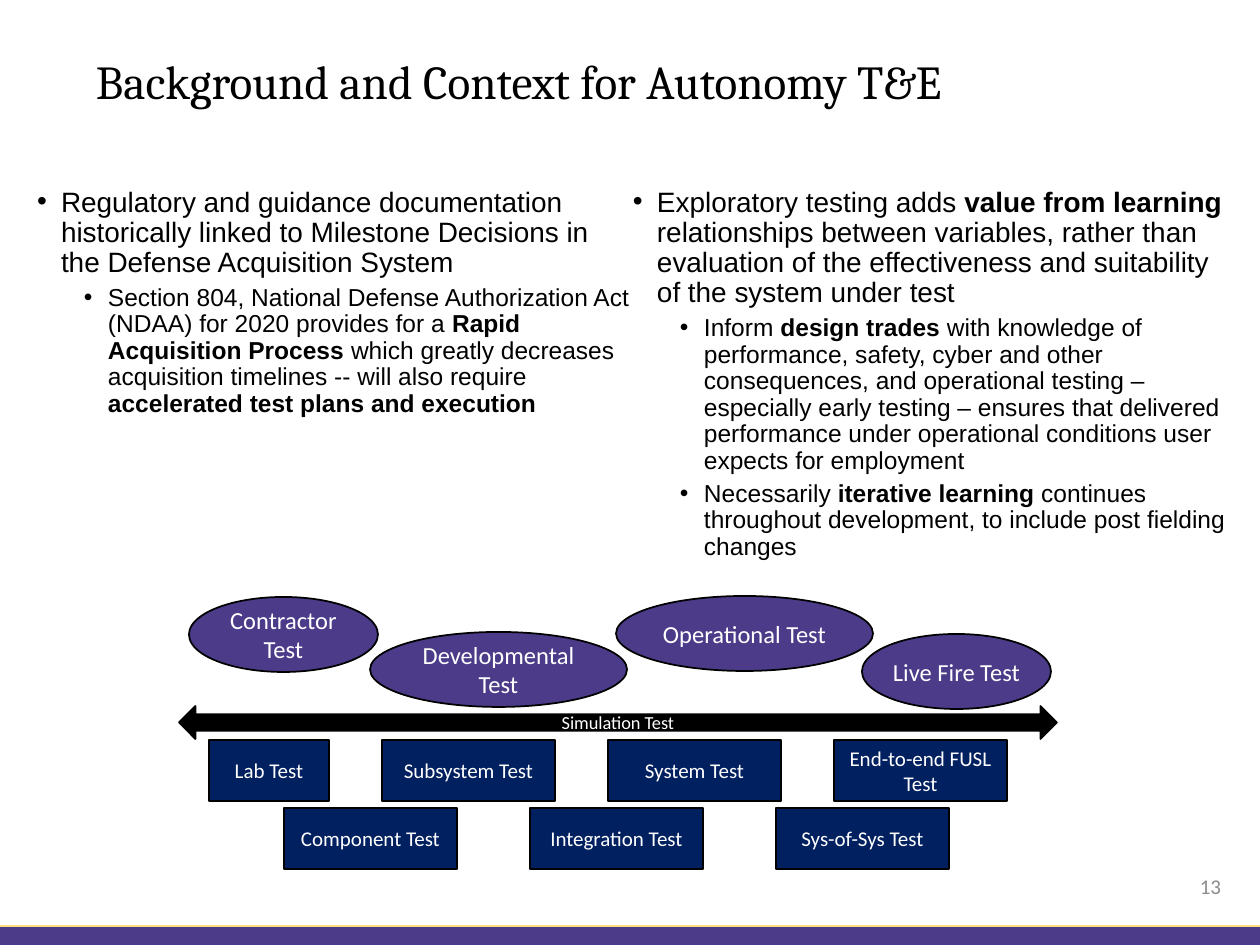
from lxml import etree
from pptx import Presentation
from pptx import util as u
from pptx.dml.color import RGBColor
from pptx.enum import shapes, text
from pptx.oxml import ns

PX_PER_INCH = 126
PURPLE = RGBColor(0x4C, 0x3B, 0x89)
GOLD = RGBColor(0xFF, 0xDF, 0x7F)
NAVY = RGBColor(0x00, 0x20, 0x60)
BLACK = RGBColor(0x00, 0x00, 0x00)
WHITE = RGBColor(0xFF, 0xFF, 0xFF)
GRAY = RGBColor(0x8C, 0x8C, 0x8C)

LEFT_BULLETS = [
    (0, ["Regulatory and guidance documentation historically linked to "
         "Milestone Decisions in the Defense Acquisition System"]),
    (1, ["Section 804, National Defense Authorization Act (NDAA) for 2020 provides for a ",
         "Rapid Acquisition Process",
         " which greatly decreases acquisition timelines -- will also require ",
         "accelerated test plans and execution"]),
]
RIGHT_BULLETS = [
    (0, ["Exploratory testing adds ", "value from learning",
         " relationships between variables, rather than evaluation of the "
         "effectiveness and suitability of the system under test"]),
    (1, ["Inform ", "design trades",
         " with knowledge of performance, safety, cyber and other consequences, "
         "and operational testing – especially early testing – ensures that delivered "
         "performance under operational conditions user expects for employment"]),
    (1, ["Necessarily ", "iterative learning",
         " continues throughout development, to include post fielding changes"]),
]
PHASES = [
    ("Contractor Test", 189, 597, 189),
    ("Developmental Test", 370, 632, 257),
    ("Operational Test", 616, 596, 257),
    ("Live Fire Test", 862, 634, 189),
]
UPPER_TESTS = ["Subsystem Test", "System Test", "End-to-end FUSL Test"]
LOWER_TESTS = ["Component Test", "Integration Test", "Sys-of-Sys Test"]


def px(length):
    return u.Emu(round(length * 914400 / PX_PER_INCH))


def set_font(paragraph, name, size, color):
    paragraph.font.name = name
    paragraph.font.size = u.Pt(size)
    paragraph.font.color.rgb = color


def clear_insets(frame):
    frame.margin_left = frame.margin_right = 0
    frame.margin_top = frame.margin_bottom = 0


def add_text_box(slide, left, top, width, height):
    box = slide.shapes.add_textbox(px(left), px(top), px(width), px(height))
    frame = box.text_frame
    frame.word_wrap = True
    clear_insets(frame)
    return frame


def add_label(slide, label, box, name, size, color, align):
    paragraph = add_text_box(slide, *box).paragraphs[0]
    paragraph.text = label
    paragraph.alignment = align
    paragraph.line_spacing = 0.9
    set_font(paragraph, name, size, color)


def add_bullet(paragraph, level):
    properties = paragraph._p.get_or_add_pPr()
    properties.set("marL", str(px(71 if level else 24)))
    properties.set("indent", str(-px(24)))
    etree.SubElement(properties, ns.qn("a:buFont"), typeface="Arial")
    etree.SubElement(properties, ns.qn("a:buChar"), char="•")


def add_bullets(slide, left, bullets):
    frame = add_text_box(slide, left, 188, 596, 400)
    for index, (level, pieces) in enumerate(bullets):
        paragraph = frame.add_paragraph() if index else frame.paragraphs[0]
        paragraph.level = level
        add_bullet(paragraph, level)
        paragraph.line_spacing = 0.9
        if index:
            paragraph.space_before = u.Pt(3.8)
        set_font(paragraph, "Arial", 14 if level else 16, BLACK)
        for position, piece in enumerate(pieces):
            run = paragraph.add_run()
            run.text = piece
            if position % 2:
                run.font.bold = True


def add_block(slide, kind, box, fill, outline=BLACK):
    shape = slide.shapes.add_shape(kind, *map(px, box))
    shape.shadow.inherit = False
    shape.fill.solid()
    shape.fill.fore_color.rgb = fill
    if outline is None:
        shape.line.fill.background()
    else:
        shape.line.color.rgb = outline
        shape.line.width = u.Pt(1)
    return shape


def add_labelled_block(slide, kind, label, box, fill, size):
    frame = add_block(slide, kind, box, fill).text_frame
    frame.word_wrap = True
    frame.vertical_anchor = text.MSO_ANCHOR.MIDDLE
    clear_insets(frame)
    paragraph = frame.paragraphs[0]
    paragraph.text = label
    paragraph.alignment = text.PP_ALIGN.CENTER
    set_font(paragraph, "Calibri", size, WHITE)


def add_footer(slide):
    add_block(slide, shapes.MSO_SHAPE.RECTANGLE, (0, 926, 1260, 19), PURPLE, None)
    rule = slide.shapes.add_connector(
        shapes.MSO_CONNECTOR.STRAIGHT, 0, px(926), px(1260), px(926))
    rule.line.color.rgb = GOLD
    rule.line.width = u.Pt(1)
    etree.SubElement(rule._element.spPr, ns.qn("a:effectLst"))


def add_test_boxes(slide):
    boxes = [("Lab Test", 209, 740, 120)]
    boxes += [(label, 382 + 226 * i, 740, 173) for i, label in enumerate(UPPER_TESTS)]
    boxes += [(label, 284 + 246 * i, 808, 173) for i, label in enumerate(LOWER_TESTS)]
    for label, left, top, width in boxes:
        add_labelled_block(slide, shapes.MSO_SHAPE.RECTANGLE, label,
                           (left, top, width, 61), NAVY, 12)


def main():
    presentation = Presentation()
    presentation.slide_width = px(1260)
    presentation.slide_height = px(945)
    slide = presentation.slides.add_slide(presentation.slide_layouts[6])
    add_footer(slide)
    add_label(slide, "Background and Context for Autonomy T&E", (96, 59, 941, 62),
              "Cambria", 27, BLACK, text.PP_ALIGN.LEFT)
    add_bullets(slide, 37, LEFT_BULLETS)
    add_bullets(slide, 633, RIGHT_BULLETS)
    add_label(slide, "13", (963, 876, 258, 38), "Calibri", 12, GRAY, text.PP_ALIGN.RIGHT)
    for label, left, top, width in PHASES:
        add_labelled_block(slide, shapes.MSO_SHAPE.OVAL, label,
                           (left, top, width, 75), PURPLE, 14)
    add_test_boxes(slide)
    add_labelled_block(slide, shapes.MSO_SHAPE.LEFT_RIGHT_ARROW, "Simulation Test",
                       (179, 706, 878, 33), BLACK, 10.5)
    presentation.save("out.pptx")


if __name__ == "__main__":
    main()
